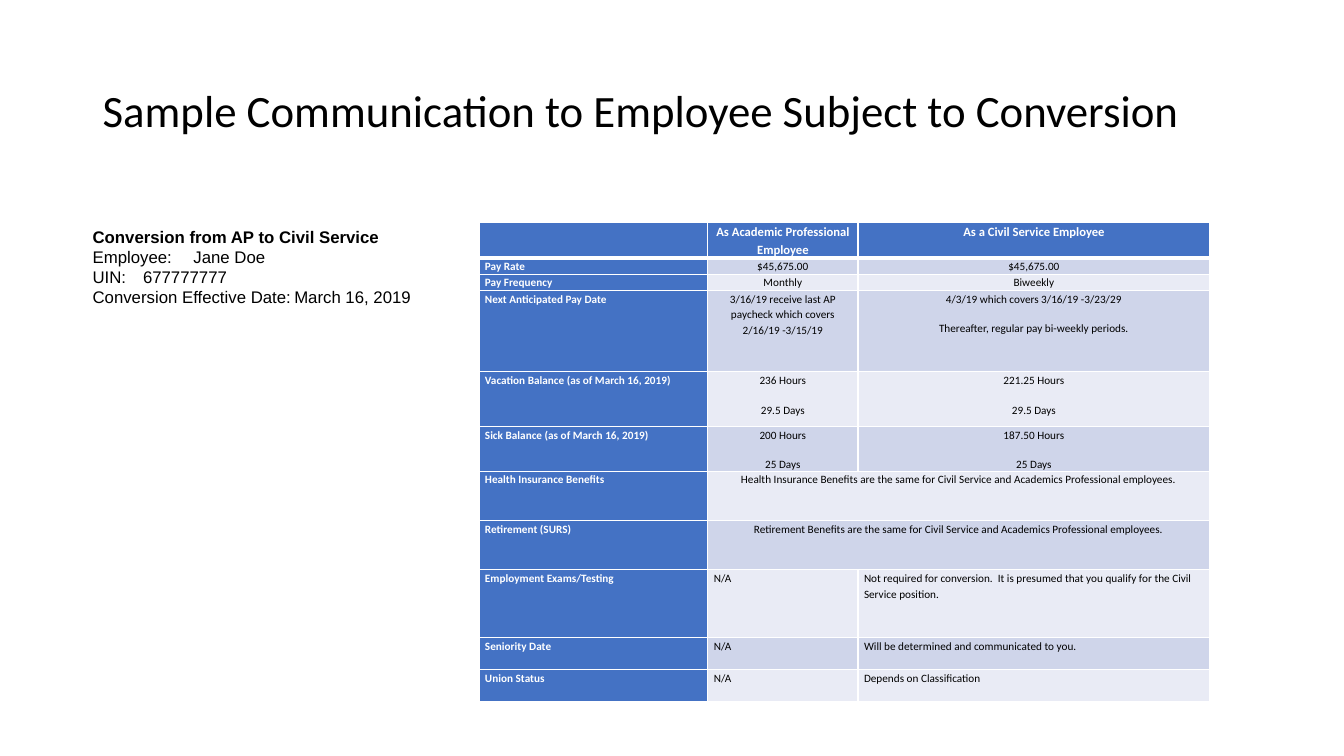
"""Build the slide on the sample communication about an employee conversion."""
import pptx
import pptx.dml.color
import pptx.enum.text
import pptx.oxml
import pptx.oxml.ns
import pptx.util

COLORS = {"header": "4472C4", "odd": "CFD5EA", "even": "E9EBF5",
          "light": "FFFFFF", "dark": "000000"}
TITLE = "Sample Communication to Employee Subject to Conversion"
EMPLOYEE = [
    "Conversion from AP to Civil Service",
    "Employee:\tJane Doe",
    "UIN:\t677777777",
    "Conversion Effective Date:\tMarch 16, 2019",
]
SAME = "{} Benefits are the same for Civil Service and Academics Professional employees."
ROWS = [
    (0.35, "", "As Academic Professional Employee", "As a Civil Service Employee"),
    (0.16, "Pay Rate", "$45,675.00", "$45,675.00"),
    (0.16, "Pay Frequency", "Monthly", "Biweekly"),
    (0.81, "Next Anticipated Pay Date",
     "3/16/19 receive last AP paycheck which covers 2/16/19 -3/15/19",
     "4/3/19 which covers 3/16/19 -3/23/29\nThereafter, regular pay bi-weekly periods."),
    (0.54, "Vacation Balance (as of March 16, 2019)",
     "236 Hours\n29.5 Days", "221.25 Hours\n29.5 Days"),
    (0.43, "Sick Balance (as of March 16, 2019)",
     "200 Hours\n25 Days", "187.50 Hours\n25 Days"),
    (0.49, "Health Insurance Benefits", SAME.format("Health Insurance"), None),
    (0.49, "Retirement (SURS)", SAME.format("Retirement"), None),
    (0.67, "Employment Exams/Testing", "N/A",
     "Not required for conversion.  It is presumed that you qualify for the Civil Service position."),
    (0.32, "Seniority Date", "N/A", "Will be determined and communicated to you."),
    (0.32, "Union Status", "N/A", "Depends on Classification"),
]
COLUMNS = (2.27, 1.49, 3.49)
FIRST_LEFT_ROW = 8
TABLE_LEFT, TABLE_TOP = 4.75, 2.21
ALIGN = pptx.enum.text.PP_ALIGN
ANCHOR = pptx.enum.text.MSO_ANCHOR


def inches(*lengths):
    return [pptx.util.Inches(length) for length in lengths]


def style(para, font, size, color, bold=False):
    for span in para.runs:
        span.font.name = font
        span.font.size = pptx.util.Pt(size)
        span.font.bold = bold
        span.font.color.rgb = pptx.dml.color.RGBColor.from_string(COLORS[color])


def add_text(page, area, text, anchor, wrap):
    frame = page.shapes.add_textbox(*inches(*area)).text_frame
    frame.text = text
    frame.vertical_anchor = anchor
    frame.word_wrap = wrap
    return frame.paragraphs


def add_borders(cell, bottom):
    properties = cell._tc.get_or_add_tcPr()
    for place, (side, width) in enumerate([("L", 1), ("R", 1), ("T", 1), ("B", bottom)]):
        properties.insert(place, pptx.oxml.parse_xml(
            f'<a:ln{side} {pptx.oxml.ns.nsdecls("a")} w="{pptx.util.Pt(width)}">'
            f'<a:solidFill><a:srgbClr val="{COLORS["light"]}"/></a:solidFill></a:ln{side}>'))


def fill_cell(cell, text, row, column):
    heading = row == 0 or column == 0
    cell.margin_left = cell.margin_right = pptx.util.Inches(0.06)
    cell.margin_top = cell.margin_bottom = 0
    cell.fill.solid()
    shade = "header" if heading else "odd" if row % 2 else "even"
    cell.fill.fore_color.rgb = pptx.dml.color.RGBColor.from_string(COLORS[shade])
    add_borders(cell, 1 if row else 3)
    if not text:
        return
    cell.text_frame.text = text
    centred = column > 0 and row < FIRST_LEFT_ROW
    for para in cell.text_frame.paragraphs:
        para.alignment = ALIGN.CENTER if centred else ALIGN.LEFT
        para.line_spacing = 1.15
        para.space_after = pptx.util.Pt(10)
        style(para, "Calibri", 8 if row else 9, "light" if heading else "dark", heading)


def add_comparison(page):
    size = sum(COLUMNS), sum(row[0] for row in ROWS)
    table = page.shapes.add_table(
        len(ROWS), len(COLUMNS), *inches(TABLE_LEFT, TABLE_TOP, *size)).table
    for column, width in zip(table.columns, inches(*COLUMNS)):
        column.width = width
    for row, (height, *texts) in enumerate(ROWS):
        table.rows[row].height = pptx.util.Inches(height)
        for column, text in enumerate(texts):
            fill_cell(table.cell(row, column), text, row, column)
        if texts[-1] is None:
            table.cell(row, 1).merge(table.cell(row, 2))


def main():
    deck = pptx.Presentation()
    deck.slide_width, deck.slide_height = inches(13.33, 7.5)
    page = deck.slides.add_slide(deck.slide_layouts[6])
    title = add_text(page, (0.92, 0.4, 11.5, 1.45), TITLE, ANCHOR.MIDDLE, True)[0]
    title.line_spacing = 0.9
    style(title, "Calibri", 32, "dark")
    details = add_text(page, (0.82, 2.2, 3.39, 1.18), "\n".join(EMPLOYEE), ANCHOR.TOP, False)
    for number, para in enumerate(details):
        style(para, "Arial", 12, "dark", number == 0)
    add_comparison(page)
    deck.save("out.pptx")


if __name__ == "__main__":
    main()
